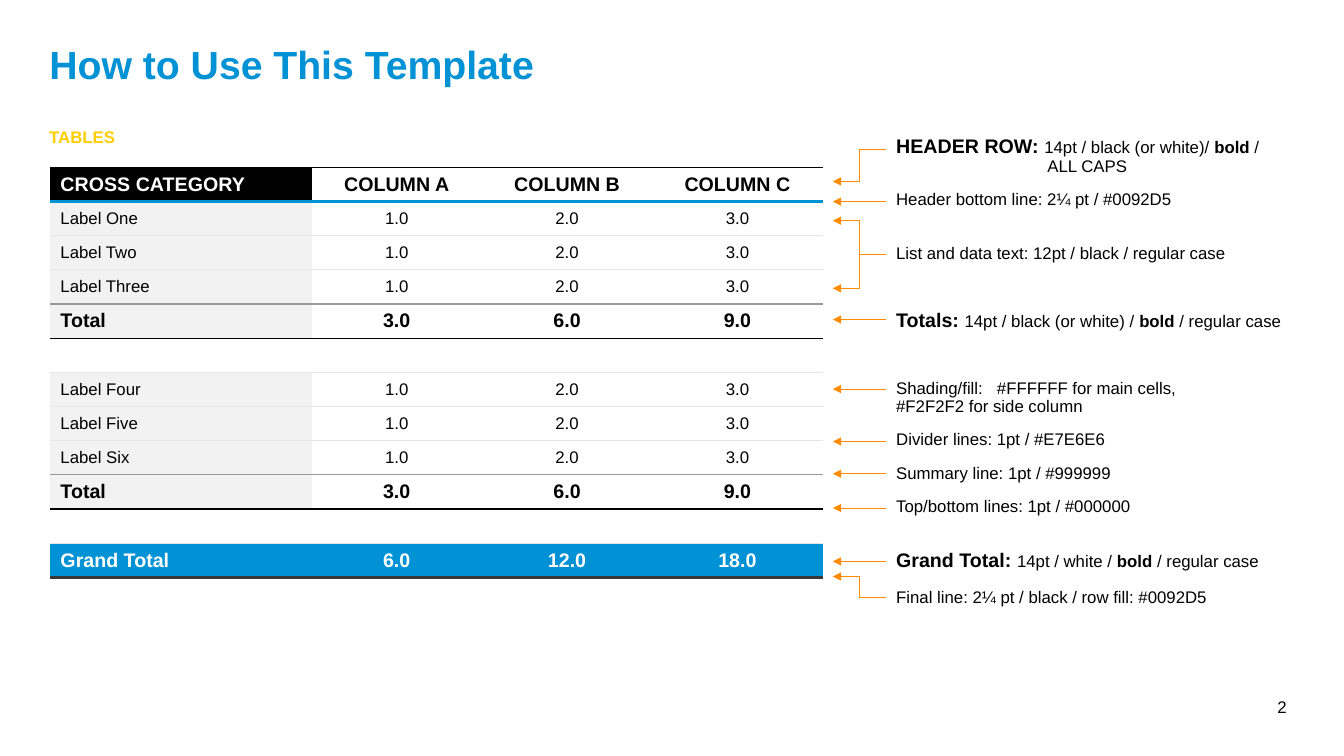
"""Build a slide that explains the table formatting rules of a template."""
from dataclasses import dataclass

from lxml import etree
from pptx import Presentation
from pptx import util as u
from pptx.dml import color
from pptx.enum import shapes, text
from pptx.oxml import ns

BLACK, WHITE, BLUE, YELLOW = "000000", "FFFFFF", "0092D5", "FFCD00"
ORANGE, PALE, DIVIDER, SUMMARY, FINAL = "FF8C00", "F2F2F2", "E7E6E6", "999999", "383838"
NO_STYLE = "{2D5ABB26-0587-4C30-8999-92F81FD0307C}"
NOTE_LEFT, ARROW_END = 8.79, 8.26
LEFT, CENTER, RIGHT = text.PP_ALIGN.LEFT, text.PP_ALIGN.CENTER, text.PP_ALIGN.RIGHT


@dataclass
class Span:
    text: str
    size: float = 12
    bold: bool = False


@dataclass
class Row:
    cells: list[str]
    line: str = DIVIDER
    weight: float = 1
    size: float = 12
    bold: bool = False
    label_fill: str | None = PALE
    label_color: str = BLACK
    value_fill: str | None = None
    value_color: str = BLACK


@dataclass
class Note:
    top: float
    width: float
    height: float
    spans: list[Span]
    arrows: list[tuple[float, float]]
    wrap: bool = False
    hanging: float = 0


def data_row(label: str, line: str = DIVIDER) -> Row:
    return Row([label, "1.0", "2.0", "3.0"], line)


def total_row() -> Row:
    return Row(["Total", "3.0", "6.0", "9.0"], BLACK, size=14, bold=True)


def blank_row() -> Row:
    return Row([""] * 4, label_fill=None)


def bold_note(heading: str, details: str) -> list[Span]:
    return [Span(heading, 14, True), Span(details), Span("bold ", bold=True)]


ROWS = [
    Row(["CROSS CATEGORY", "COLUMN A", "COLUMN B", "COLUMN C"], BLUE, 2.25, 14, True, BLACK, WHITE),
    data_row("Label One"), data_row("Label Two"), data_row("Label Three", SUMMARY),
    total_row(), blank_row(),
    data_row("Label Four"), data_row("Label Five"), data_row("Label Six", SUMMARY),
    total_row(), blank_row(),
    Row(["Grand Total", "6.0", "12.0", "18.0"], FINAL, 2.25, 14, True, BLUE, WHITE, BLUE, WHITE),
]

NOTES = [
    Note(1.31, 4.16, 0.53, bold_note("HEADER ROW: ", "14pt / black (or white)/ ")
         + [Span("/ "), Span("\n"), Span("ALL CAPS")], [(1.48, 1.8)], True, 1.5),
    Note(1.85, 3, 0.28, [Span("Header bottom line: 2¼ pt / #0092D5")], [(2, 2)]),
    Note(2.38, 3.5, 0.28, [Span("List and data text: 12pt / black / regular case")],
         [(2.52, 2.19), (2.52, 2.86)]),
    Note(3.03, 4.16, 0.31, bold_note("Totals: ", "14pt / black (or white) / ")
         + [Span("/ regular case")], [(3.17, 3.17)], True),
    Note(3.72, 3.23, 0.46,
         [Span("Shading/fill: \t#FFFFFF for main cells, \t#F2F2F2 for side column")],
         [(3.86, 3.86)], True),
    Note(4.23, 2.29, 0.28, [Span("Divider lines: 1pt / #E7E6E6")], [(4.38, 4.38)]),
    Note(4.56, 2.35, 0.28, [Span("Summary line: 1pt / #999999")], [(4.7, 4.7)]),
    Note(4.89, 2.59, 0.28, [Span("Top/bottom lines: 1pt / #000000")], [(5.04, 5.04)]),
    Note(5.41, 4.16, 0.31, bold_note("Grand Total: ", "14pt / white / ")
         + [Span("/ regular case")], [(5.57, 5.57)], True),
    Note(5.79, 3.36, 0.28, [Span("Final line: 2¼ pt / black / row fill: #0092D5")],
         [(5.93, 5.72)]),
]


def rgb(value: str) -> color.RGBColor:
    return color.RGBColor.from_string(value)


def format_runs(paragraph, size: float, bold: bool, hex_color: str, align=LEFT) -> None:
    paragraph.alignment = align
    for run in paragraph.runs:
        run.font.name = "Arial"
        run.font.size = u.Pt(size)
        run.font.bold = bold
        run.font.color.rgb = rgb(hex_color)


def add_box(slide, left: float, top: float, width: float, height: float, wrap: bool):
    shape = slide.shapes.add_textbox(*map(u.Inches, (left, top, width, height)))
    shape.text_frame.word_wrap = wrap
    shape.text_frame.auto_size = text.MSO_AUTO_SIZE.SHAPE_TO_FIT_TEXT
    return shape


def add_border(cell, tag: str, hex_color: str, weight: float) -> None:
    line = etree.Element(ns.qn(tag), w=str(u.Pt(weight)))
    fill = etree.SubElement(line, ns.qn("a:solidFill"))
    etree.SubElement(fill, ns.qn("a:srgbClr"), val=hex_color)
    cell._tc.get_or_add_tcPr().insert(0, line)


def fill_cell(cell, content: str, row: Row, is_label: bool, top: tuple[str, float]) -> None:
    cell.vertical_anchor = text.MSO_ANCHOR.MIDDLE
    fill = row.label_fill if is_label else row.value_fill
    if fill:
        cell.fill.solid()
        cell.fill.fore_color.rgb = rgb(fill)
    else:
        cell.fill.background()
    add_border(cell, "a:lnB", row.line, row.weight)
    add_border(cell, "a:lnT", *top)
    paragraph = cell.text_frame.paragraphs[0]
    paragraph.text = content
    format_runs(paragraph, row.size, row.bold, row.label_color if is_label else row.value_color,
                LEFT if is_label else CENTER)
    etree.SubElement(paragraph._p, ns.qn("a:endParaRPr"), sz=str(row.size * 100))


def add_sample_table(slide) -> None:
    frame = slide.shapes.add_table(len(ROWS), 4, *map(u.Inches, (0.5, 1.66, 7.66, 4.07)))
    table = frame.table
    table.first_row = table.horz_banding = False
    table._tbl.tblPr.find(ns.qn("a:tableStyleId")).text = NO_STYLE
    for column, width in zip(table.columns, (2.59, 1.69, 1.69, 1.69)):
        column.width = u.Inches(width)
    top = (BLACK, 1)
    for index, row in enumerate(ROWS):
        table.rows[index].height = u.Inches(4.07 / len(ROWS))
        for column, content in enumerate(row.cells):
            fill_cell(table.cell(index, column), content, row, column == 0, top)
        top = (row.line, row.weight)


def add_arrow(slide, start: float, end: float) -> None:
    kind = shapes.MSO_CONNECTOR.STRAIGHT if start == end else shapes.MSO_CONNECTOR.ELBOW
    points = map(u.Inches, (NOTE_LEFT, start, ARROW_END, end))
    connector = slide.shapes.add_connector(kind, *points)
    connector.line.color.rgb = rgb(ORANGE)
    connector.line.width = u.Pt(0.5)
    etree.SubElement(connector.line._get_or_add_ln(), ns.qn("a:tailEnd"), type="triangle")
    etree.SubElement(connector._element.spPr, ns.qn("a:effectLst"))


def add_note(slide, note: Note) -> None:
    shape = add_box(slide, NOTE_LEFT, note.top, note.width, note.height, note.wrap)
    paragraph = shape.text_frame.paragraphs[0]
    paragraph.line_spacing = 0.9
    if note.hanging:
        indent = u.Inches(note.hanging)
        properties = paragraph._p.get_or_add_pPr()
        properties.set("marL", str(indent))
        properties.set("indent", str(-indent))
    format_runs(paragraph, 12, False, BLACK)
    for span in note.spans:
        if span.text == "\n":
            paragraph.add_line_break()
            etree.SubElement(paragraph._p[-1], ns.qn("a:rPr"), sz="1200")
            continue
        run = paragraph.add_run()
        run.text = span.text
        run.font.name = "Arial"
        run.font.size = u.Pt(span.size)
        run.font.bold = span.bold
        run.font.color.rgb = rgb(BLACK)
    for start, end in note.arrows:
        add_arrow(slide, start, end)


def add_title(slide) -> None:
    title = slide.shapes.title
    title.left, title.top, title.width, title.height = map(u.Inches, (0.39, 0.4, 12.32, 0.77))
    frame = title.text_frame
    frame.text = "How to Use This Template"
    frame.vertical_anchor = text.MSO_ANCHOR.TOP
    frame.auto_size = text.MSO_AUTO_SIZE.NONE
    frame.paragraphs[0].line_spacing = 0.9
    format_runs(frame.paragraphs[0], 28, True, BLUE)


def main() -> None:
    presentation = Presentation()
    presentation.slide_width, presentation.slide_height = u.Inches(13.33), u.Inches(7.5)
    slide = presentation.slides.add_slide(presentation.slide_layouts[5])
    add_title(slide)
    section = add_box(slide, 0.39, 1.21, 0.86, 0.3, False)
    section.text_frame.text = "TABLES"
    format_runs(section.text_frame.paragraphs[0], 12, True, YELLOW)
    add_sample_table(slide)
    for note in NOTES:
        add_note(slide, note)
    number = add_box(slide, 9.86, 6.81, 3, 0.4, True)
    number.text_frame.auto_size = text.MSO_AUTO_SIZE.NONE
    number.text_frame.vertical_anchor = text.MSO_ANCHOR.MIDDLE
    number.text_frame.text = "2"
    format_runs(number.text_frame.paragraphs[0], 12, False, BLACK, RIGHT)
    presentation.save("out.pptx")


if __name__ == "__main__":
    main()
